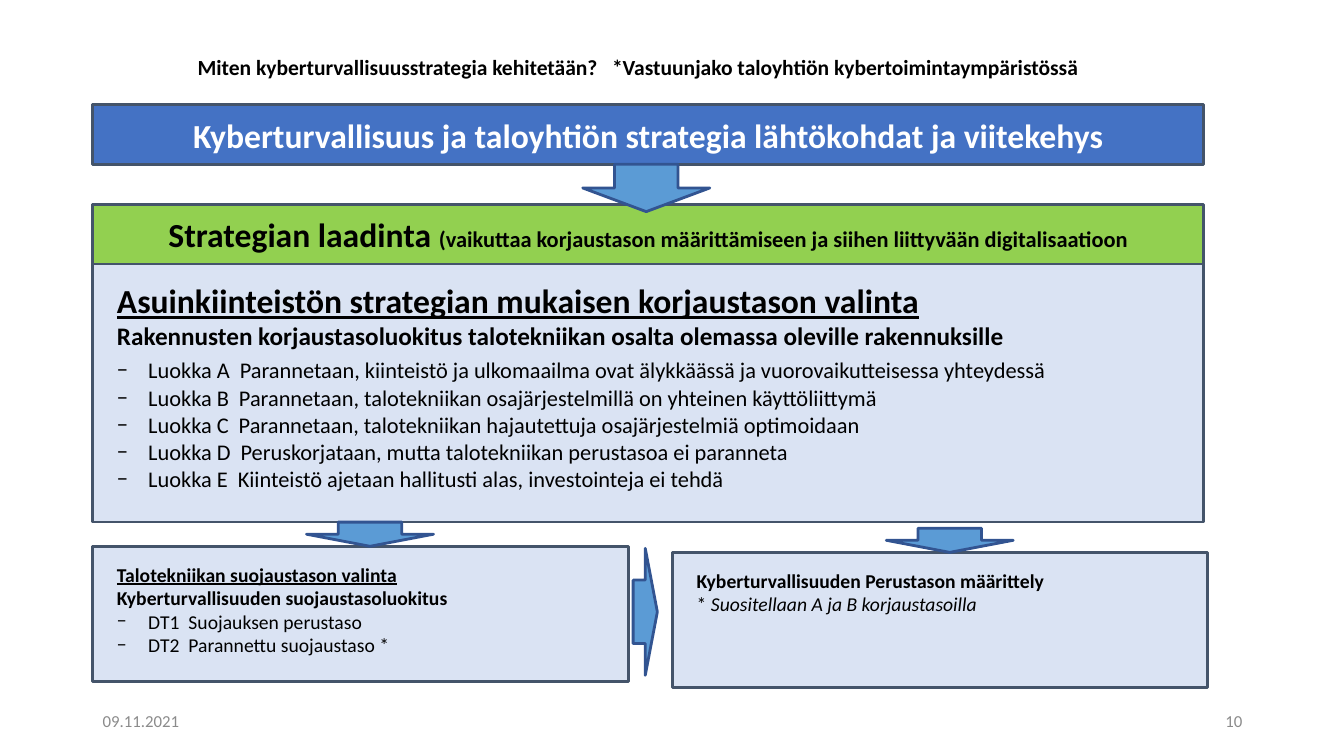
from dataclasses import dataclass, field

from lxml import etree
from pptx import Presentation
from pptx import util as u
from pptx.dml.color import RGBColor
from pptx.enum import shapes, text
from pptx.oxml import ns

FONT = "Calibri"
BLACK, WHITE, GREY = "000000", "FFFFFF", "8B8B8B"
PALE, GREEN, BLUE, ARROW_BLUE = "DAE3F3", "92D050", "4472C4", "5B9BD5"
BOX_LINE, ARROW_LINE = "44546A", "325491"
LEFT, WIDTH, BANNER_HEIGHT = 0.92, 11.02, 0.59
LOWER_WIDTH, LOWER_HEIGHT = 5.31, 1.34
ARROW_SPAN, ARROW_DEPTH = 1.26, 0.24
BULLET, BULLET_INDENT = "−", 0.31
CENTER, RIGHT = text.PP_ALIGN.CENTER, text.PP_ALIGN.RIGHT


@dataclass
class Run:
    text: str
    size: float
    formats: dict = field(default_factory=dict)
    color: str = BLACK


@dataclass
class Line:
    runs: list[Run]
    bullet: bool = False
    formats: dict = field(default_factory=dict)


@dataclass
class Box:
    place: tuple[float, float, float, float]
    fill: str
    lines: list[Line]
    banner: bool = False


@dataclass
class Arrow:
    kind: shapes.MSO_SHAPE
    place: tuple[float, float, float, float]


BOLD = {"bold": True}
HEADING = {"bold": True, "underline": True}


def bullets(size: float, *labels: str) -> list[Line]:
    return [Line([Run(label, size)], bullet=True) for label in labels]


repair_classes = bullets(
    16,
    "Luokka A  Parannetaan, kiinteistö ja ulkomaailma ovat älykkäässä ja vuorovaikutteisessa yhteydessä",
    "Luokka B  Parannetaan, talotekniikan osajärjestelmillä on yhteinen käyttöliittymä",
    "Luokka C  Parannetaan, talotekniikan hajautettuja osajärjestelmiä optimoidaan",
    "Luokka D  Peruskorjataan, mutta talotekniikan perustasoa ei paranneta",
    "Luokka E  Kiinteistö ajetaan hallitusti alas, investointeja ei tehdä",
)
repair_classes[0].formats = {"space_before": u.Pt(4), "space_after": u.Pt(1)}

BOXES = [
    Box((LEFT, 2.62, WIDTH, 2.56), PALE, [
        Line([Run("Asuinkiinteistön strategian mukaisen korjaustason valinta", 24, HEADING)]),
        Line([Run("Rakennusten korjaustasoluokitus talotekniikan osalta olemassa oleville rakennuksille", 18, BOLD)]),
        *repair_classes,
    ]),
    Box((LEFT, 5.42, LOWER_WIDTH, LOWER_HEIGHT), PALE, [
        Line([Run("Talotekniikan suojaustason valinta", 14, HEADING)]),
        Line([Run("Kyberturvallisuuden suojaustasoluokitus", 14, BOLD)]),
        *bullets(14, "DT1  Suojauksen perustaso", "DT2  Parannettu suojaustaso *"),
    ]),
    Box((LEFT, 2.03, WIDTH, BANNER_HEIGHT), GREEN, [
        Line([Run("Strategian laadinta ", 24, BOLD),
              Run("(vaikuttaa korjaustason määrittämiseen ja siihen liittyvään digitalisaatioon", 16, BOLD)],
             formats={"alignment": CENTER}),
    ], banner=True),
    Box((LEFT, 1.04, WIDTH, BANNER_HEIGHT), BLUE, [
        Line([Run("Kyberturvallisuus ja taloyhtiön strategia lähtökohdat ja viitekehys", 24, BOLD, WHITE)],
             formats={"alignment": CENTER}),
    ], banner=True),
    Box((6.67, 5.48, LOWER_WIDTH, LOWER_HEIGHT), PALE, [
        Line([Run("Kyberturvallisuuden Perustason määrittely", 14, BOLD)]),
        Line([Run("*", 14), Run(" Suositellaan A ja B korjaustasoilla", 14, {"italic": True})]),
    ]),
]

DOWN = shapes.MSO_SHAPE.DOWN_ARROW
ARROWS = [
    Arrow(DOWN, (5.78, 1.63, ARROW_SPAN, 0.47)),
    Arrow(DOWN, (3.04, 5.18, ARROW_SPAN, ARROW_DEPTH)),
    Arrow(DOWN, (8.79, 5.24, ARROW_SPAN, ARROW_DEPTH)),
    Arrow(shapes.MSO_SHAPE.RIGHT_ARROW, (6.28, 5.44, ARROW_DEPTH, ARROW_SPAN)),
]


def rgb(color: str) -> RGBColor:
    return RGBColor.from_string(color)


def apply(target, formats: dict) -> None:
    for name, value in formats.items():
        setattr(target, name, value)


def add_bullet(paragraph) -> None:
    properties = paragraph._p.get_or_add_pPr()
    indent = u.Inches(BULLET_INDENT)
    properties.set("marL", str(indent))
    properties.set("indent", str(-indent))
    color = etree.SubElement(properties, ns.qn("a:buClr"))
    etree.SubElement(color, ns.qn("a:srgbClr"), val=BLACK)
    etree.SubElement(properties, ns.qn("a:buFont"), typeface=FONT)
    etree.SubElement(properties, ns.qn("a:buChar"), char=BULLET)


def write(frame, lines: list[Line], formats: dict) -> None:
    apply(frame, {"word_wrap": True, "auto_size": text.MSO_AUTO_SIZE.NONE, **formats})
    for index, line in enumerate(lines):
        paragraph = frame.add_paragraph() if index else frame.paragraphs[0]
        if line.bullet:
            add_bullet(paragraph)
        apply(paragraph, {"alignment": text.PP_ALIGN.LEFT, **line.formats})
        for part in line.runs:
            run = paragraph.add_run()
            run.text = part.text
            apply(run.font, {"name": FONT, "size": u.Pt(part.size), "bold": False, **part.formats})
            run.font.color.rgb = rgb(part.color)


def add_shape(slide, kind, place: tuple, fill: str, outline: str):
    shape = slide.shapes.add_shape(kind, *map(u.Inches, place))
    shape.shadow.inherit = False
    shape.fill.solid()
    shape.fill.fore_color.rgb = rgb(fill)
    shape.line.color.rgb = rgb(outline)
    shape.line.width = u.Pt(2)
    return shape


def add_box(slide, box: Box) -> None:
    shape = add_shape(slide, shapes.MSO_SHAPE.RECTANGLE, box.place, box.fill, BOX_LINE)
    if box.banner:
        formats = {"vertical_anchor": text.MSO_ANCHOR.MIDDLE}
    else:
        formats = {"vertical_anchor": text.MSO_ANCHOR.TOP,
                   "margin_left": u.Inches(0.24), "margin_top": u.Inches(0.16)}
    write(shape.text_frame, box.lines, formats)


def add_footer(slide, left: float, label: str, alignment) -> None:
    shape = slide.shapes.add_textbox(*map(u.Inches, (left, 6.95, 3, 0.4)))
    line = Line([Run(label, 12, color=GREY)], formats={"alignment": alignment})
    write(shape.text_frame, [line], {"vertical_anchor": text.MSO_ANCHOR.MIDDLE})


def set_title(slide) -> None:
    title = slide.shapes.title
    place = dict(zip(("left", "top", "width", "height"), map(u.Inches, (1.86, 0.4, 10.55, 0.57))))
    apply(title, place)
    question = "Miten kyberturvallisuusstrategia kehitetään?   *Vastuunjako taloyhtiön kybertoimintaympäristössä"
    line = Line([Run(question, 15.4, BOLD)], formats={"line_spacing": 0.9})
    write(title.text_frame, [line], {"vertical_anchor": text.MSO_ANCHOR.MIDDLE})


def main() -> None:
    presentation = Presentation()
    presentation.slide_width = u.Inches(13.33)
    presentation.slide_height = u.Inches(7.5)
    slide = presentation.slides.add_slide(presentation.slide_layouts.get_by_name("Title Only"))
    set_title(slide)
    add_footer(slide, LEFT, "09.11.2021", text.PP_ALIGN.LEFT)
    add_footer(slide, 9.42, "10", RIGHT)
    for box in BOXES:
        add_box(slide, box)
    for arrow in ARROWS:
        add_shape(slide, arrow.kind, arrow.place, ARROW_BLUE, ARROW_LINE)
    presentation.save("out.pptx")


if __name__ == "__main__":
    main()
